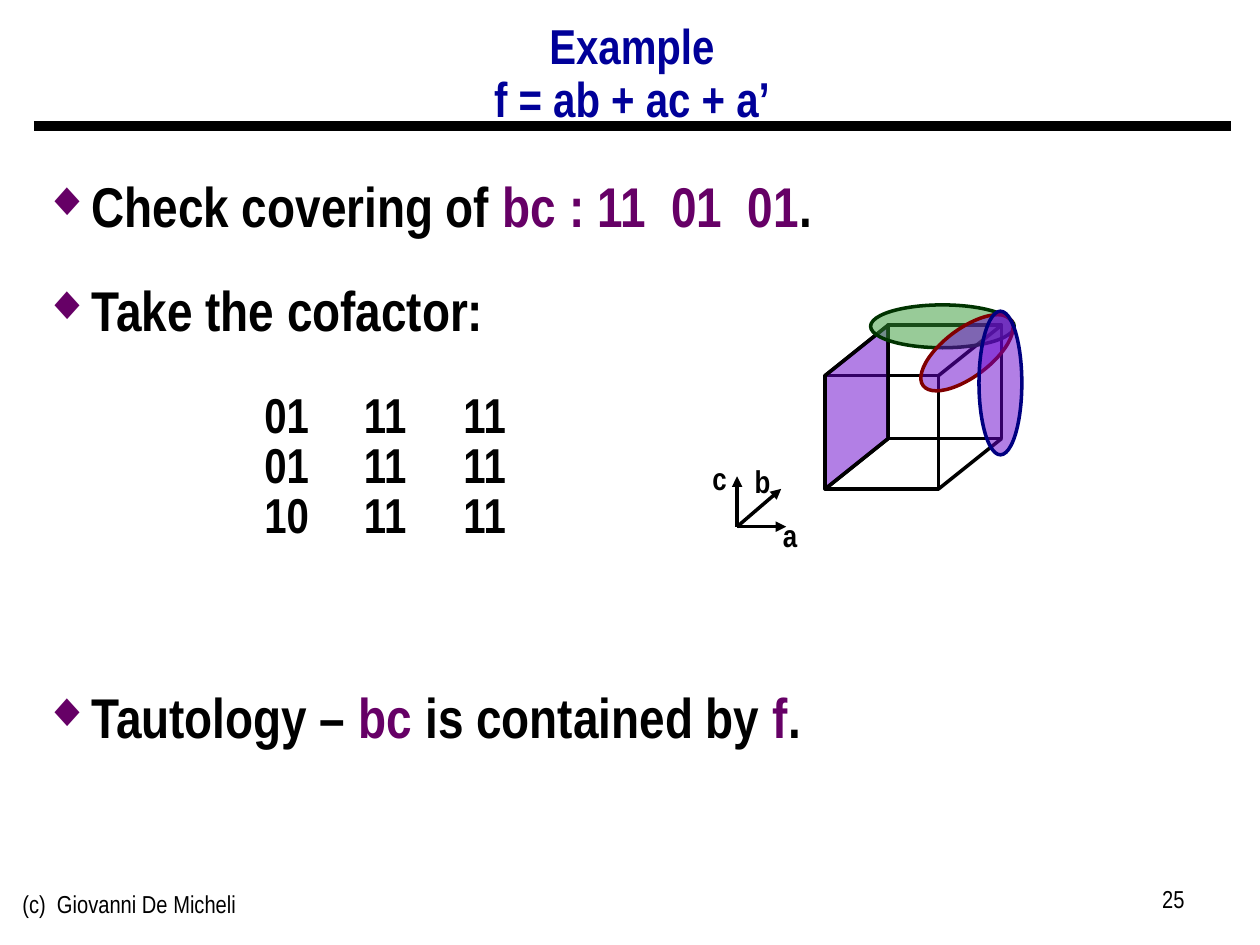
from lxml.etree import SubElement
from pptx import Presentation
from pptx.dml.color import RGBColor
from pptx.enum.shapes import MSO_CONNECTOR, MSO_SHAPE
from pptx.enum.text import MSO_ANCHOR, PP_ALIGN
from pptx.oxml.ns import qn
from pptx.util import Inches, Pt

FONT = "Arial Narrow"
BLACK = RGBColor(0x00, 0x00, 0x00)
BLUE = RGBColor(0x00, 0x00, 0x99)
PLUM = RGBColor(0x66, 0x00, 0x66)
VIOLET = RGBColor(0x66, 0x00, 0xCC)
GREEN = RGBColor(0x33, 0x99, 0x33)
FOREST = RGBColor(0x00, 0x33, 0x00)
MAROON = RGBColor(0x80, 0x00, 0x00)
NAVY = RGBColor(0x00, 0x00, 0x80)

SMALL = {"size": Pt(14), "bold": False}
LABEL = {"size": Pt(18), "bold": True}
HEAD = {"size": Pt(28), "bold": True}
BODY = {"size": Pt(32), "bold": True}


def add_box(slide, box, wrap=True):
    frame = slide.shapes.add_textbox(*map(Inches, box)).text_frame
    frame.word_wrap = wrap
    return frame


def add_run(para, text, style, color=BLACK):
    run = para.add_run()
    run.text = text
    for name, value in {"name": FONT, **style}.items():
        setattr(run.font, name, value)
    run.font.color.rgb = color


def add_text(slide, box, text, style, align=PP_ALIGN.LEFT, wrap=True):
    para = add_box(slide, box, wrap).paragraphs[0]
    para.alignment = align
    add_run(para, text, style)
    return para


def add_title(slide, box, lines):
    frame = add_box(slide, box)
    frame.vertical_anchor = MSO_ANCHOR.MIDDLE
    para = frame.paragraphs[0]
    para.alignment = PP_ALIGN.CENTER
    para.line_spacing = 0.9
    for i, line in enumerate(lines):
        if i:
            para.add_line_break()
        add_run(para, line, HEAD, BLUE)


def add_bullet(para, runs, before):
    para.line_spacing = 1.25
    para.space_before = Pt(before)
    props = para._p.get_or_add_pPr()
    props.set("marL", str(Inches(0.31)))
    props.set("indent", str(-Inches(0.31)))
    color = SubElement(props, qn("a:buClr"))
    SubElement(color, qn("a:srgbClr"), val=str(PLUM))
    SubElement(props, qn("a:buSzPct"), val="85000")
    SubElement(props, qn("a:buFont"), typeface=FONT)
    SubElement(props, qn("a:buChar"), char="◆")
    for text, tint in runs:
        add_run(para, text, BODY, tint)


def add_row(slide, top, cells):
    para = add_text(slide, (2, top, 2.15, 0.57), "\t".join(cells), HEAD,
                    wrap=False)
    tabs = SubElement(para._p.get_or_add_pPr(), qn("a:tabLst"))
    for i in range(1, len(cells)):
        SubElement(tabs, qn("a:tab"), pos=str(Inches(0.79 * i)), algn="l")


def add_line(slide, start, end, width=2, arrow=False):
    line = slide.shapes.add_connector(
        MSO_CONNECTOR.STRAIGHT, *map(Inches, start + end))
    line.line.color.rgb = BLACK
    line.line.width = Pt(width)
    if arrow:
        SubElement(line.line._get_or_add_ln(), qn("a:tailEnd"),
                   type="triangle")
    SubElement(line._element.spPr, qn("a:effectLst"))


def add_shape(slide, kind, box, edge, fill=None, turn=0):
    shape = slide.shapes.add_shape(kind, *map(Inches, box))
    shape.shadow.inherit = False
    shape.rotation = turn
    shape.line.color.rgb = edge
    shape.line.width = Pt(2)
    if fill is None:
        shape.fill.background()
    else:
        shape.fill.solid()
        shape.fill.fore_color.rgb = fill
        tint = shape._element.spPr.find(qn("a:solidFill"))[0]
        SubElement(tint, qn("a:alpha"), val="50000")
    return shape


def add_cube(slide):
    left, top, side, dx, dy = 6.55, 2.98, 0.9, 0.5, 0.4
    # Front and back faces, then the edges between them
    for x, y in ((left, top), (left + dx, top - dy)):
        add_shape(slide, MSO_SHAPE.RECTANGLE, (x, y, side, side), BLACK)
    for x in (left, left + side):
        for y in (top, top + side):
            add_line(slide, (x, y), (x + dx, y - dy))
    # Shaded left face
    span = side + dy
    face = add_shape(
        slide, MSO_SHAPE.PARALLELOGRAM,
        (left + (dx - span) / 2, top - dy + (span - dx) / 2, span, dx),
        BLACK, VIOLET, 90)
    face.adjustments[0] = dy / dx
    face._element.spPr.xfrm.set("flipH", "1")
    # Covered edges
    for box, edge, fill, turn in (
            ((6.91, 2.42, 1.14, 0.34), FOREST, GREEN, 0),
            ((7.24, 2.61, 0.87, 0.38), MAROON, VIOLET, 323.1),
            ((7.77, 2.47, 0.34, 1.14), NAVY, VIOLET, 0)):
        add_shape(slide, MSO_SHAPE.OVAL, box, edge, fill, turn)


def add_axes(slide):
    for name, end, spot in (("a", (6.24, 4.18), (6.11, 4.05)),
                            ("b", (6.2, 3.88), (5.89, 3.62)),
                            ("c", (5.85, 3.78), (5.55, 3.59))):
        add_line(slide, (5.85, 4.18), end, arrow=True)
        add_text(slide, spot + (0.32, 0.4), name, LABEL,
                 PP_ALIGN.CENTER, False)


def main():
    deck = Presentation()
    deck.slide_width, deck.slide_height = Inches(10), Inches(7.5)
    slide = deck.slides.add_slide(deck.slide_layouts[6])

    # Rule and footer
    add_line(slide, (0.27, 1), (9.77, 1), width=6)
    add_text(slide, (0.08, 7.01, 3.17, 0.52), "(c)  Giovanni De Micheli",
             SMALL)
    add_text(slide, (7.17, 6.97, 2.33, 0.52), "25", SMALL, PP_ALIGN.RIGHT)

    # Bullets, with room for the matrix before the last
    frame = add_box(slide, (0.25, 1.18, 9.51, 5.69))
    points = (
        (11.5, (("Check covering of ", BLACK), ("bc : 11  01  01", PLUM),
                (".", BLACK))),
        (11.5, (("Take the cofactor:", BLACK),)),
        (184.5, (("Tautology – ", BLACK), ("bc", PLUM),
                 (" is contained by ", BLACK), ("f", PLUM), (".", BLACK))),
    )
    for i, (before, runs) in enumerate(points):
        para = frame.add_paragraph() if i else frame.paragraphs[0]
        add_bullet(para, runs, before)

    # Title
    add_title(slide, (0.26, 0.22, 9.51, 0.75),
              ("Example", "f = ab + ac + a’"))

    # Cube, axes and cofactor matrix
    add_cube(slide)
    add_axes(slide)
    for i, first in enumerate(("01", "01", "10")):
        add_row(slide, 3 + 0.4 * i, (first, "11", "11"))

    deck.save("out.pptx")


if __name__ == "__main__":
    main()
